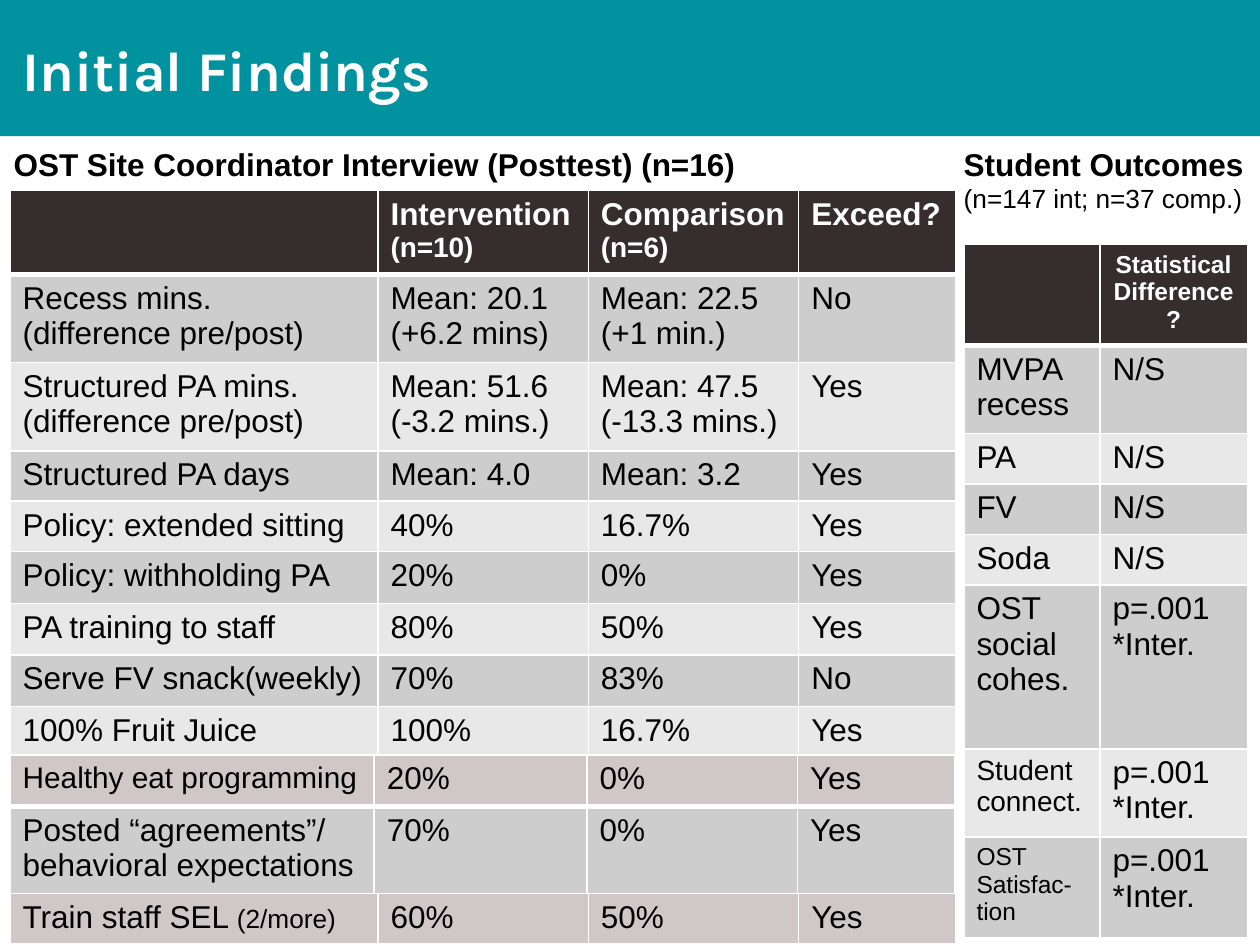
import pptx
import pptx.dml.color
import pptx.enum.shapes
import pptx.enum.text
import pptx.oxml
import pptx.oxml.ns
import pptx.util

Inches = pptx.util.Inches
TEAL, DARK, WHITE, BLACK = "00929E", "352D2E", "FFFFFF", "000000"
GREY, LIGHT, ROSE = "CECDCD", "E8E8E8", "D0C7C8"
STRIPES = [GREY, LIGHT] * 4
THIN, THICK = 1, 3

# Text that differs from the usual 18 points
SIZES = {
    "Initial Findings": 32,
    "(n=10)": 16, "(n=6)": 16,
    "Healthy eat programming": 17, "(2/more)": 15,
    "(n=147 int; n=37 comp.)": 15,
    "Statistical": 14, "Difference?": 14,
    "Student": 16, "connect.": 16, "OST Satisfac-tion": 14,
}


def write_text(frame, text, color, bold_lines=0, font="Arial"):
    """Write one paragraph per line; "|" divides a line into runs."""
    for index, line in enumerate(text.split("\n")):
        para = frame.paragraphs[0] if index == 0 else frame.add_paragraph()
        for part in line.split("|"):
            span = para.add_run()
            span.text = part
            span.font.name = font
            span.font.size = pptx.util.Pt(SIZES.get(part, 18))
            span.font.bold = index < bold_lines
            span.font.color.rgb = pptx.dml.color.RGBColor.from_string(color)


def add_grid(left, top, widths, heights, rows, fills, bottoms):
    """Add a table; bottoms gives the width of the line under each row."""
    table = page.shapes.add_table(
        len(rows), len(widths), Inches(left), Inches(top),
        Inches(sum(widths)), Inches(sum(heights))).table
    table.first_row = table.horz_banding = False
    for column, width in zip(table.columns, widths):
        column.width = Inches(width)
    for index, values in enumerate(rows):
        table.rows[index].height = Inches(heights[index])
        header = fills[index] == DARK
        above = bottoms[index - 1] if index else THIN
        for cell, text in zip(table.rows[index].cells, values):
            if text:
                write_text(cell.text_frame, text, WHITE if header else BLACK,
                           bold_lines=2 if header else 0)
            properties = cell._tc.get_or_add_tcPr()
            borders = {"lnL": THIN, "lnR": THIN, "lnT": above, "lnB": bottoms[index]}
            for tag, points in borders.items():
                properties.append(pptx.oxml.parse_xml(
                    f'<a:{tag} {pptx.oxml.ns.nsdecls("a")} w="{pptx.util.Pt(points)}">'
                    f'<a:solidFill><a:srgbClr val="{WHITE}"/></a:solidFill></a:{tag}>'))
            cell.fill.solid()
            cell.fill.fore_color.rgb = pptx.dml.color.RGBColor.from_string(fills[index])
    return table


deck = pptx.Presentation()
deck.slide_width, deck.slide_height = Inches(10), Inches(7.5)
page = deck.slides.add_slide(deck.slide_layouts[6])

# Title band
band = page.shapes.add_shape(pptx.enum.shapes.MSO_SHAPE.RECTANGLE,
                             0, 0, deck.slide_width, Inches(1.08))
band.shadow.inherit = False
band.fill.solid()
band.fill.fore_color.rgb = pptx.dml.color.RGBColor.from_string(TEAL)
band.line.fill.background()

title = page.shapes.add_textbox(Inches(0.08), Inches(0.17), Inches(8.42), Inches(0.75))
title.text_frame.word_wrap = True
title.text_frame.vertical_anchor = pptx.enum.text.MSO_ANCHOR.MIDDLE
write_text(title.text_frame, "Initial Findings", WHITE, bold_lines=1, font="Karla")

# Table headings
headings = [
    (0.01, 6.2, 0.4, "OST Site Coordinator Interview (Posttest) (n=16)"),
    (7.55, 2.45, 0.66, "Student Outcomes\n(n=147 int; n=37 comp.)"),
]
for left, width, height, text in headings:
    box = page.shapes.add_textbox(Inches(left), Inches(1.1), Inches(width), Inches(height))
    box.text_frame.word_wrap = False
    write_text(box.text_frame, text, BLACK, bold_lines=1)

# Coordinator interview
interview_widths = [2.92, 1.67, 1.67, 1.25]
interview_rows = [
    ("", "Intervention |(n=10)", "Comparison\n(n=6)", "Exceed?"),
    ("Recess mins.\n(difference pre/post)", "Mean: 20.1\n(+6.2 mins)",
     "Mean: 22.5\n(+1 min.)", "No"),
    ("Structured PA mins.\n(difference pre/post)", "Mean: 51.6\n(-3.2 mins.)",
     "Mean: 47.5\n(-13.3 mins.)", "Yes"),
    ("Structured PA days", "Mean: 4.0", "Mean: 3.2", "Yes"),
    ("Policy: extended sitting", "40%", "16.7%", "Yes"),
    ("Policy: withholding PA", "20%", "0%", "Yes"),
    ("PA training to staff", "80%", "50%", "Yes"),
    ("Serve FV snack(weekly)", "70%", "83%", "No"),
    ("100% Fruit Juice", "100%", "16.7%", "Yes"),
]
add_grid(0.08, 1.51, interview_widths,
         [0.62, 0.67, 0.67, 0.38, 0.38] + [0.41] * 4,
         interview_rows, [DARK] + STRIPES, [THICK] + [THIN] * 8)

programming_rows = [
    ("Healthy eat programming", "20%", "0%", "Yes"),
    ("Posted “agreements”/ behavioral expectations", "70%", "0%", "Yes"),
]
add_grid(0.08, 5.99, [2.89, 1.69, 1.67, 1.25], [0.41, 0.67],
         programming_rows, [ROSE, GREY], [THICK, THIN])

add_grid(0.08, 7.09, interview_widths, [0.41],
         [("Train staff SEL |(2/more)", "60%", "50%", "Yes")], [ROSE], [THICK])

# Student outcomes
outcome_rows = [
    ("", "Statistical\nDifference?"),
    ("MVPA\nrecess", "N/S"),
    ("PA", "N/S"),
    ("FV", "N/S"),
    ("Soda", "N/S"),
    ("OST social cohes.", "p=.001\n*Inter."),
    ("Student\nconnect.", "p=.001\n*Inter."),
    ("OST Satisfac-tion", "p=.001\n*Inter."),
]
outcomes = add_grid(7.65, 1.94, [1.08, 1.17],
                    [0.79, 0.7, 0.4, 0.4, 0.4, 1.3, 0.7, 0.8],
                    outcome_rows, [DARK] + STRIPES[:7], [THICK] + [THIN] * 7)
for para in outcomes.cell(0, 1).text_frame.paragraphs:
    para.alignment = pptx.enum.text.PP_ALIGN.CENTER

deck.save("out.pptx")
